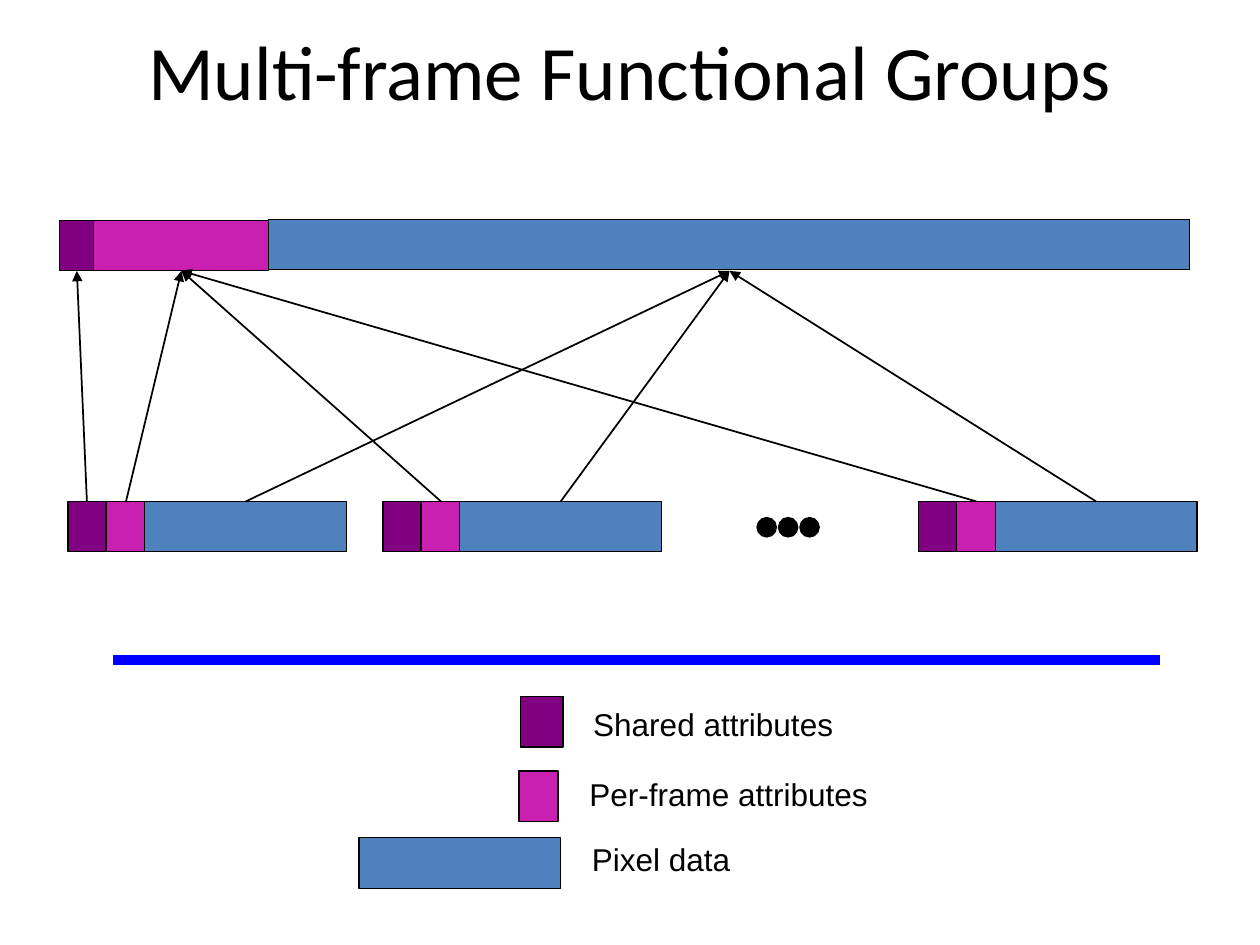
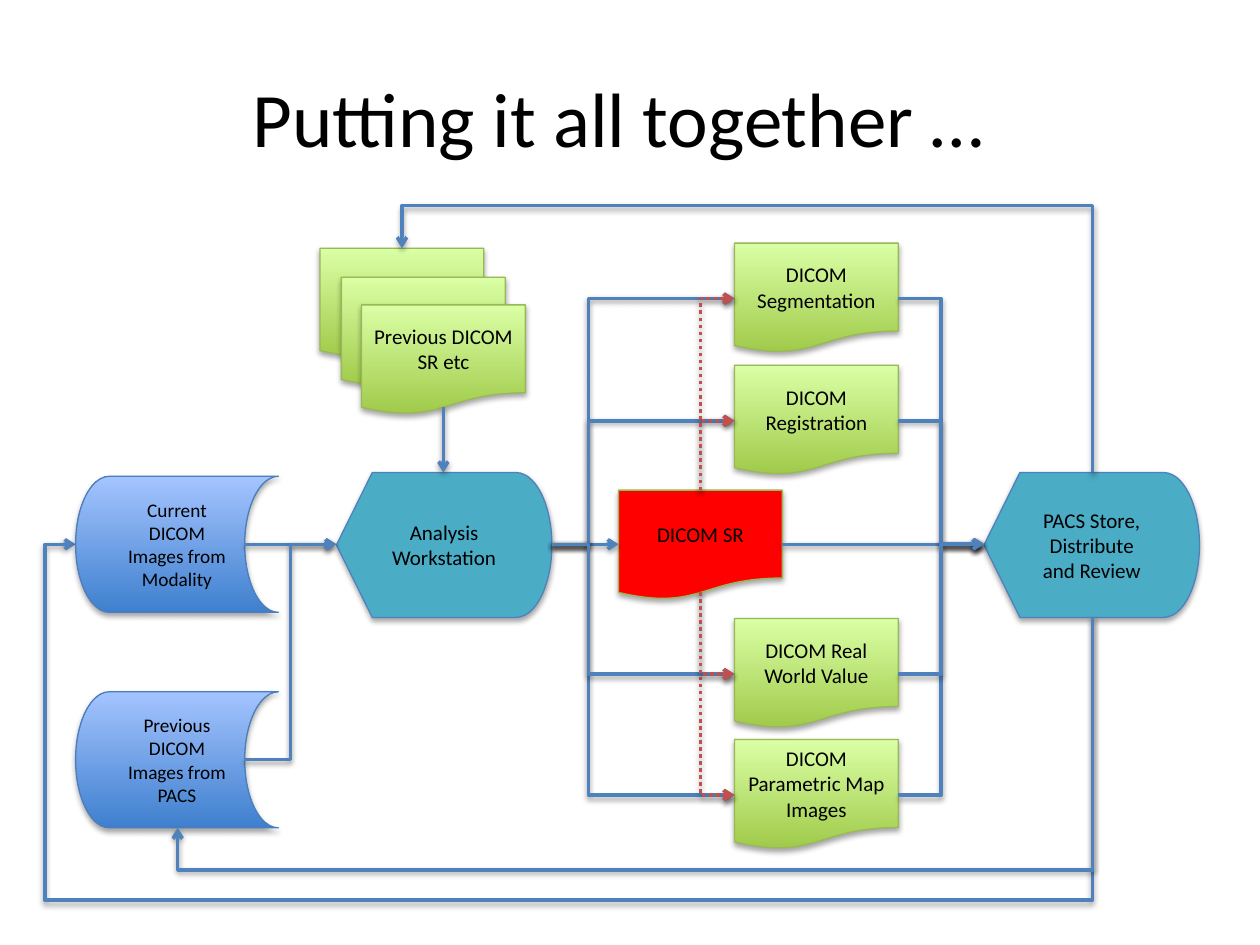
from lxml.etree import SubElement
from pptx import Presentation
from pptx.dml.color import RGBColor
from pptx.enum.dml import MSO_LINE
from pptx.enum.shapes import MSO_CONNECTOR as CONN, MSO_SHAPE as SHAPE
from pptx.enum.text import MSO_ANCHOR as ANCHOR, PP_ALIGN as ALIGN
from pptx.oxml.ns import qn
from pptx.util import Inches, Pt

BLACK = RGBColor(0x00, 0x00, 0x00)
PURPLE = RGBColor(0x80, 0x00, 0x80)
MAGENTA = RGBColor(0xCA, 0x20, 0xB2)
BLUE = RGBColor(0x4F, 0x81, 0xBD)
RULE_BLUE = RGBColor(0x00, 0x00, 0xFF)
TEAL = RGBColor(0x4B, 0xAC, 0xC6)
RED = RGBColor(0xFF, 0x00, 0x00)
DARK_RED = RGBColor(0xC0, 0x50, 0x4D)
GREEN_EDGE = RGBColor(0x98, 0xB9, 0x55)
STORE_EDGE = RGBColor(0x4B, 0x7E, 0xBC)
GREEN = (RGBColor(0xA0, 0xCA, 0x4A), RGBColor(0xDA, 0xFF, 0xA5))
STORE_BLUE = (RGBColor(0x3F, 0x80, 0xCE), RGBColor(0xA4, 0xC4, 0xFF))
SHADOW = {"blurRad": "40000", "dir": "5400000", "rotWithShape": "0"}


def add_box(shapes, preset, at, fill, edge=BLACK, text="", size=12, shadow=False, edge_width=0.75):
    s = shapes.add_shape(preset, *map(Inches, at))
    s.shadow.inherit = False
    if isinstance(fill, RGBColor):
        s.fill.solid()
        s.fill.fore_color.rgb = fill
    else:
        s.fill.gradient()
        s.fill.gradient_angle = 90
        for stop, color in zip(s.fill.gradient_stops, fill):
            stop.color.rgb = color
    s.line.color.rgb = edge
    s.line.width = Pt(edge_width)
    if shadow:
        effects = s._element.spPr.find(qn("a:effectLst"))
        outer = SubElement(effects, qn("a:outerShdw"), dist="23000", **SHADOW)
        rgb = SubElement(outer, qn("a:srgbClr"), val="000000")
        SubElement(rgb, qn("a:alpha"), val="35000")
    if text:
        tf = s.text_frame
        tf.word_wrap = True
        tf.vertical_anchor = ANCHOR.MIDDLE
        p = tf.paragraphs[0]
        p.text = text
        p.alignment = ALIGN.CENTER
        p.font.name, p.font.size, p.font.color.rgb = "Calibri", Pt(size), BLACK
    return s


def add_line(shapes, start, end, color, width, head=None, bends=None, vertical=False, dash=None):
    (x1, y1), (x2, y2) = start, end
    dx, dy = x2 - x1, y2 - y1
    if vertical:
        cx, cy = (x1 + x2) / 2, (y1 + y2) / 2
        half_w = abs(dy) / 2 * (-1 if dx >= 0 else 1)
        half_h = abs(dx) / 2 * (-1 if dy < 0 else 1)
        x1, y1, x2, y2 = cx - half_w, cy - half_h, cx + half_w, cy + half_h
    kind = CONN.STRAIGHT if bends is None else CONN.ELBOW
    c = shapes.add_connector(kind, *map(Inches, (x1, y1, x2, y2)))
    sp = c._element.spPr
    if vertical:
        sp.find(qn("a:xfrm")).set("rot", "5400000" if dx * dy < 0 else "16200000")
    if bends is not None:
        geom = sp.find(qn("a:prstGeom"))
        geom.set("prst", f"bentConnector{len(bends) + 2}")
        for i, bend in enumerate(bends, 1):
            SubElement(geom.find(qn("a:avLst")), qn("a:gd"), name=f"adj{i}",
                       fmla=f"val {round(bend * 100000)}")
    c.line.color.rgb = color
    c.line.width = Pt(width)
    if dash:
        c.line.dash_style = dash
    if head:
        SubElement(sp.find(qn("a:ln")), qn("a:tailEnd"), type=head)
    effects = SubElement(sp, qn("a:effectLst"))
    if bends is not None:
        outer = SubElement(effects, qn("a:outerShdw"), dist="20000", **SHADOW)
        rgb = SubElement(outer, qn("a:srgbClr"), val="000000")
        SubElement(rgb, qn("a:alpha"), val="38000")


prs = Presentation()
prs.slide_width, prs.slide_height = Inches(10), Inches(7.5)

slides = []
for title, top, height, right_inset in (
    ("Multi-frame Functional Groups", 0.13, 0.85, 0.1),
    ("Putting it all together …", 0.3, 1.25, 0.28),
):
    slide = prs.slides.add_slide(prs.slide_layouts[5])
    s = slide.shapes.title
    s.left, s.top, s.width, s.height = map(Inches, (0.5, top, 9, height))
    tf = s.text_frame
    tf.text = title
    tf.vertical_anchor = ANCHOR.MIDDLE
    tf.margin_right = Inches(right_inset)
    p = tf.paragraphs[0]
    p.alignment = ALIGN.CENTER
    p.font.name, p.font.size, p.font.color.rgb = "Calibri", Pt(44), BLACK
    slides.append(slide.shapes)
groups, workflow = slides

for label, color, left, top, width, text_left, text_top, text_width in (
    ("Shared attributes", PURPLE, 4.13, 5.53, 0.34, 4.61, 5.55, 2.11),
    ("Per-frame attributes", MAGENTA, 4.12, 6.12, 0.31, 4.58, 6.1, 2.41),
    ("Pixel data", BLUE, 2.85, 6.65, 1.6, 4.6, 6.62, 1.3),
):
    add_box(groups, SHAPE.RECTANGLE, (left, top, width, 0.4), color)
    tf = groups.add_textbox(*map(Inches, (text_left, text_top, text_width, 0.4))).text_frame
    tf.word_wrap = False
    p = tf.paragraphs[0]
    p.text = label
    p.font.name, p.font.size, p.font.color.rgb = "Arial", Pt(18), BLACK
add_line(groups, (0.9, 5.24), (9.21, 5.24), RULE_BLUE, 6)

frame_lefts = (0.54, 3.04, 7.29)
for left in frame_lefts:
    frame = groups.add_group_shape().shapes
    for offset, width, color in ((0, 0.3, PURPLE), (0.61, 1.6, BLUE), (0.3, 0.31, MAGENTA)):
        add_box(frame, SHAPE.RECTANGLE, (left + offset, 3.98, width, 0.4), color)

dots = groups.add_group_shape().shapes
for i in range(3):
    add_box(dots, SHAPE.OVAL, (6.01 + 0.17 * i, 4.11, 0.15, 0.15), BLACK, edge_width=1)

for left, top, width, color in (
    (0.47, 1.75, 0.27, PURPLE), (2.13, 1.74, 7.31, BLUE), (0.74, 1.75, 1.39, MAGENTA),
):
    add_box(groups, SHAPE.RECTANGLE, (left, top, width, 0.4), color)

add_line(groups, (0.69, 3.98), (0.61, 2.15), BLACK, 1, "triangle")
for left in frame_lefts:
    for offset, target in ((0.46, 1.44), (1.41, 5.79)):
        add_line(groups, (left + offset, 3.98), (target, 2.15), BLACK, 1, "triangle")

flow = (BLUE, 2, "arrow")
mid_y = 4.32
pacs_in, pacs_bottom = (7.81, mid_y), (8.67, 4.9)
station_in, station_out = (2.67, mid_y), (4.38, mid_y)

add_line(workflow, pacs_bottom, (0.6, mid_y), *flow, bends=(-3.87, 1.03), vertical=True)

for left, text in ((2.67, "Analysis Workstation"), (7.81, "PACS Store, Distribute and Review")):
    add_box(workflow, SHAPE.FLOWCHART_DISPLAY, (left, 3.75, 1.71, 1.15), TEAL, BLUE, text, shadow=True)

for top, text in ((3.78, "Current DICOM Images from Modality"), (5.49, "Previous DICOM Images from PACS")):
    add_box(workflow, SHAPE.FLOWCHART_STORED_DATA, (0.6, top, 1.61, 1.08), STORE_BLUE, STORE_EDGE,
            text, 11, shadow=True)

for left, top, fill, text in (
    (5.83, 1.93, GREEN, "DICOM Segmentation"),
    (5.83, 2.9, GREEN, "DICOM Registration"),
    (4.91, 3.89, RED, "DICOM SR"),
    (5.83, 4.91, GREEN, "DICOM Real World Value"),
    (5.83, 5.87, GREEN, "DICOM Parametric Map Images"),
):
    add_box(workflow, SHAPE.FLOWCHART_DOCUMENT, (left, top, 1.3, 0.87), fill, GREEN_EDGE, text, shadow=True)

for start, end in (
    ((1.94, mid_y), station_in), ((1.94, 6.03), station_in),
    ((6.21, mid_y), pacs_in), (station_out, (4.91, mid_y)),
):
    add_line(workflow, start, end, *flow, bends=(0.5,))
add_line(workflow, pacs_bottom, (1.41, 6.57), *flow, bends=(1.2,), vertical=True)

stack = workflow.add_group_shape().shapes
for left, top, text in ((2.54, 1.97, ""), (2.71, 2.2, ""), (2.87, 2.42, "Previous DICOM SR etc")):
    add_box(stack, SHAPE.FLOWCHART_DOCUMENT, (left, top, 1.3, 0.87), GREEN, GREEN_EDGE, text, shadow=True)
add_line(workflow, (3.52, 3.23), (3.52, 3.75), *flow, bends=(0.5,), vertical=True)
add_line(workflow, (8.67, 3.75), (3.19, 1.97), *flow, bends=(1.19,), vertical=True)

result_ys = (2.37, 3.34, 6.31, 5.35)
for y in result_ys:
    add_line(workflow, (7.13, y), pacs_in, *flow, bends=(0.5,))
for y in result_ys:
    add_line(workflow, station_out, (5.83, y), *flow, bends=(0.2,))
for y in result_ys:
    sr_edge = 3.89 if y < mid_y else 4.7
    add_line(workflow, (5.56, sr_edge), (5.83, y), DARK_RED, 2, "arrow", bends=(), vertical=True,
             dash=MSO_LINE.ROUND_DOT)

prs.save("out.pptx")
